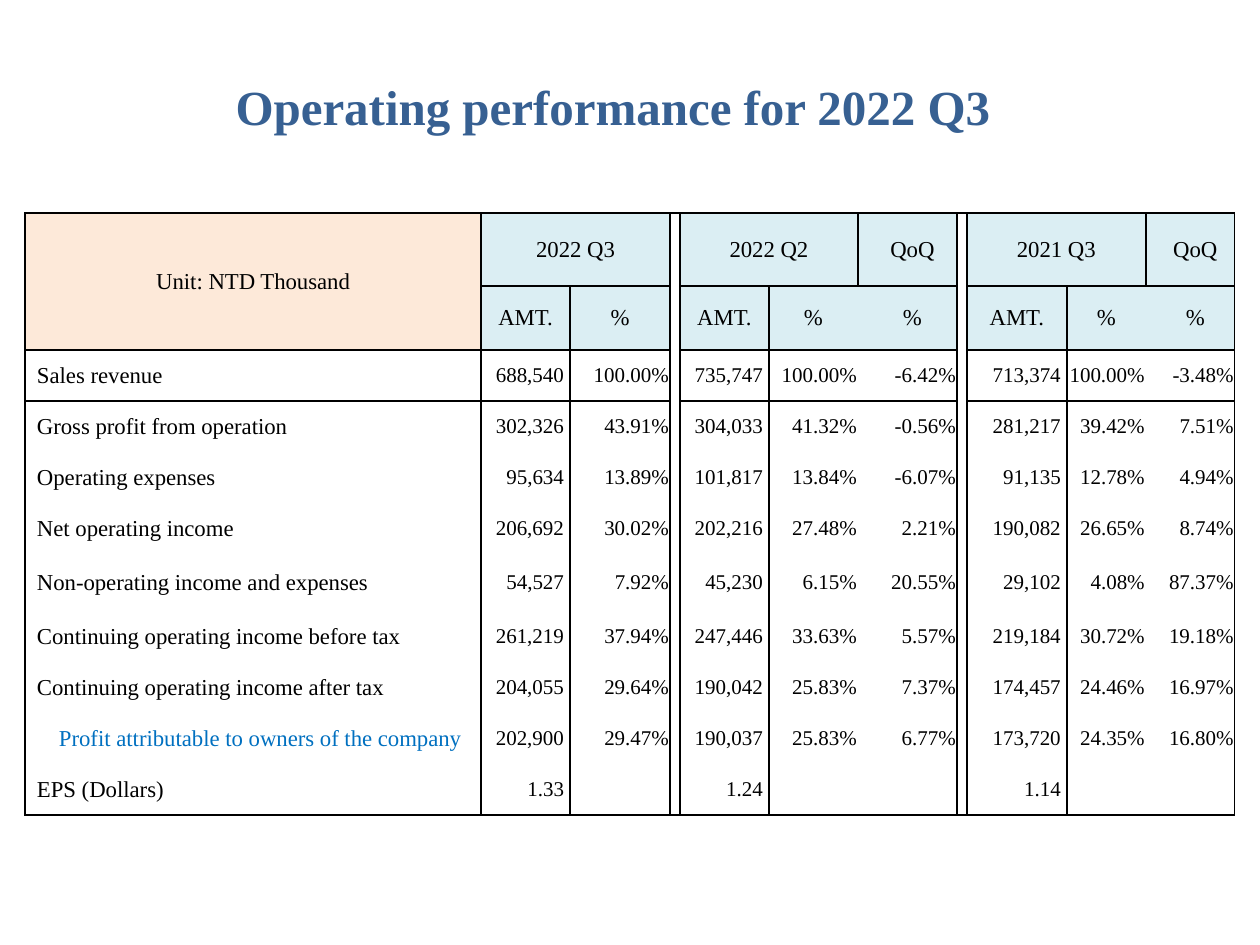
from lxml.etree import SubElement
from pptx import Presentation
from pptx.dml.color import RGBColor
from pptx.enum.text import MSO_ANCHOR, MSO_AUTO_SIZE, PP_ALIGN
from pptx.oxml import parse_xml
from pptx.oxml.ns import nsdecls, qn
from pptx.util import Pt

EMU_PER_PX = 914400 / 126
FONT = "Times New Roman"
COLORS = {
    "title": "376092",
    "text": "000000",
    "owners": "0070C0",
    "border": "000000",
    "unit": "FDE9D9",
    "header": "DBEEF3",
}
NO_STYLE_ID = "{2D5ABB26-0587-4C30-8999-92F81FD0307C}"

COLUMN_WIDTHS = [456, 89, 100, 10, 89, 89, 10, 89, 10, 100, 79, 10, 79]
ROW_HEIGHTS = [73, 64, 51, 51, 51, 51, 57, 51, 51, 51, 51]
BLOCKS = [(0, 0), (1, 2), (3, 3), (4, 7), (8, 8), (9, 12)]
GAP_COLUMNS = (3, 8)
VALUE_COLUMNS = (1, 2, 4, 5, 7, 9, 10, 12)
AMOUNT_COLUMNS = (1, 4, 9)
HEADER_ROWS = 2

PERIODS = {1: "2022 Q3", 4: "2022 Q2", 7: "QoQ", 9: "2021 Q3", 12: "QoQ"}
OWNERS = "Profit attributable to owners of the company"
RESULTS = [
    ("Sales revenue", "688,540", "100.00%", "735,747", "100.00%", "-6.42%",
     "713,374", "100.00%", "-3.48%"),
    ("Gross profit from operation", "302,326", "43.91%", "304,033", "41.32%", "-0.56%",
     "281,217", "39.42%", "7.51%"),
    ("Operating expenses", "95,634", "13.89%", "101,817", "13.84%", "-6.07%",
     "91,135", "12.78%", "4.94%"),
    ("Net operating income", "206,692", "30.02%", "202,216", "27.48%", "2.21%",
     "190,082", "26.65%", "8.74%"),
    ("Non-operating income and expenses", "54,527", "7.92%", "45,230", "6.15%", "20.55%",
     "29,102", "4.08%", "87.37%"),
    ("Continuing operating income before tax", "261,219", "37.94%", "247,446", "33.63%",
     "5.57%", "219,184", "30.72%", "19.18%"),
    ("Continuing operating income after tax", "204,055", "29.64%", "190,042", "25.83%",
     "7.37%", "174,457", "24.46%", "16.97%"),
    (OWNERS, "202,900", "29.47%", "190,037", "25.83%", "6.77%",
     "173,720", "24.35%", "16.80%"),
    ("EPS (Dollars)", "1.33", "", "1.24", "", "", "1.14", "", ""),
]


def px(length):
    return round(length * EMU_PER_PX)


def add_span(para, text, size, color, bold=False):
    span = para.add_run()
    span.text = text
    span.font.name = FONT
    span.font.size = Pt(size)
    span.font.bold = bold
    span.font.color.rgb = RGBColor.from_string(COLORS[color])


def add_title(page, text):
    box = page.shapes.title
    box.left, box.top, box.width, box.height = px(223), px(66), px(814), px(190)
    frame = box.text_frame
    frame.auto_size = MSO_AUTO_SIZE.NONE
    frame.vertical_anchor = MSO_ANCHOR.TOP
    frame.margin_top = px(10)
    para = frame.paragraphs[0]
    para.alignment = PP_ALIGN.LEFT
    add_span(para, text, 28, "title", bold=True)


def write_cell(cell, text, size, align, color="text", left=0, right=0):
    cell.margin_left, cell.margin_right = px(left), px(right)
    para = cell.text_frame.paragraphs[0]
    para.alignment = align
    if text:
        add_span(para, text, size, color)


def set_borders(cell, sides):
    """Draw the named sides (any of L, R, T, B), in schema order ahead of the fill."""
    properties = cell._tc.get_or_add_tcPr()
    for index, side in enumerate(side for side in "LRTB" if side in sides):
        line = parse_xml(f'<a:ln{side} {nsdecls("a")} w="{Pt(1)}"/>')
        fill = SubElement(line, qn("a:solidFill"))
        SubElement(fill, qn("a:srgbClr"), val=COLORS["border"])
        properties.insert(index, line)


def border_sides(row, column, cell):
    """Outline each column block; rule off the header rows except in the gaps."""
    last_row = row + (cell.span_height if cell.is_merge_origin else 1) - 1
    last_column = column + (cell.span_width if cell.is_merge_origin else 1) - 1
    in_gap = column in GAP_COLUMNS
    sides = ""
    if any(column == first for first, _ in BLOCKS):
        sides += "L"
    if any(last_column == last for _, last in BLOCKS):
        sides += "R"
    if row == 0 or (row <= HEADER_ROWS and not in_gap):
        sides += "T"
    if last_row == len(ROW_HEIGHTS) - 1 or (last_row < HEADER_ROWS and not in_gap):
        sides += "B"
    return sides


def format_grid(table):
    for row in range(len(ROW_HEIGHTS)):
        for column in range(len(COLUMN_WIDTHS)):
            cell = table.cell(row, column)
            cell.vertical_anchor = MSO_ANCHOR.MIDDLE
            cell.margin_left = cell.margin_right = 0
            cell.margin_top = cell.margin_bottom = 0
            cell.text_frame.paragraphs[0].font.size = Pt(12)
            if row < HEADER_ROWS and column not in GAP_COLUMNS:
                cell.fill.solid()
                name = "header" if column else "unit"
                cell.fill.fore_color.rgb = RGBColor.from_string(COLORS[name])
            else:
                cell.fill.background()
            set_borders(cell, border_sides(row, column, cell))


def fill_header(table):
    write_cell(table.cell(0, 0), "Unit: NTD Thousand", 13, PP_ALIGN.CENTER)
    for column, period in PERIODS.items():
        write_cell(table.cell(0, column), period, 13, PP_ALIGN.CENTER)
    for column in VALUE_COLUMNS:
        measure = "AMT." if column in AMOUNT_COLUMNS else "%"
        write_cell(table.cell(1, column), measure, 13, PP_ALIGN.CENTER)


def fill_results(table):
    for row, (label, *values) in enumerate(RESULTS, HEADER_ROWS):
        color, indent = ("owners", 34) if label == OWNERS else ("text", 12)
        write_cell(table.cell(row, 0), label, 13, PP_ALIGN.LEFT, color, left=indent)
        for column, value in zip(VALUE_COLUMNS, values):
            inset = 6 if column in AMOUNT_COLUMNS else 1
            write_cell(table.cell(row, column), value, 12, PP_ALIGN.RIGHT, right=inset)


def add_results_table(page):
    frame = page.shapes.add_table(
        len(ROW_HEIGHTS), len(COLUMN_WIDTHS), px(25), px(213),
        px(sum(COLUMN_WIDTHS)), px(sum(ROW_HEIGHTS)))
    table = frame.table
    table.first_row = table.horz_banding = False
    table._tbl.tblPr.find(qn("a:tableStyleId")).text = NO_STYLE_ID
    for column, width in zip(table.columns, COLUMN_WIDTHS):
        column.width = px(width)
    for row, height in zip(table.rows, ROW_HEIGHTS):
        row.height = px(height)
    table.cell(0, 0).merge(table.cell(1, 0))
    for column in AMOUNT_COLUMNS:
        table.cell(0, column).merge(table.cell(0, column + 1))
    format_grid(table)
    fill_header(table)
    fill_results(table)


def main():
    deck = Presentation()
    deck.slide_width, deck.slide_height = px(1260), px(945)
    page = deck.slides.add_slide(deck.slide_layouts[5])
    add_title(page, "Operating performance for 2022 Q3")
    add_results_table(page)
    deck.save("out.pptx")


if __name__ == "__main__":
    main()
